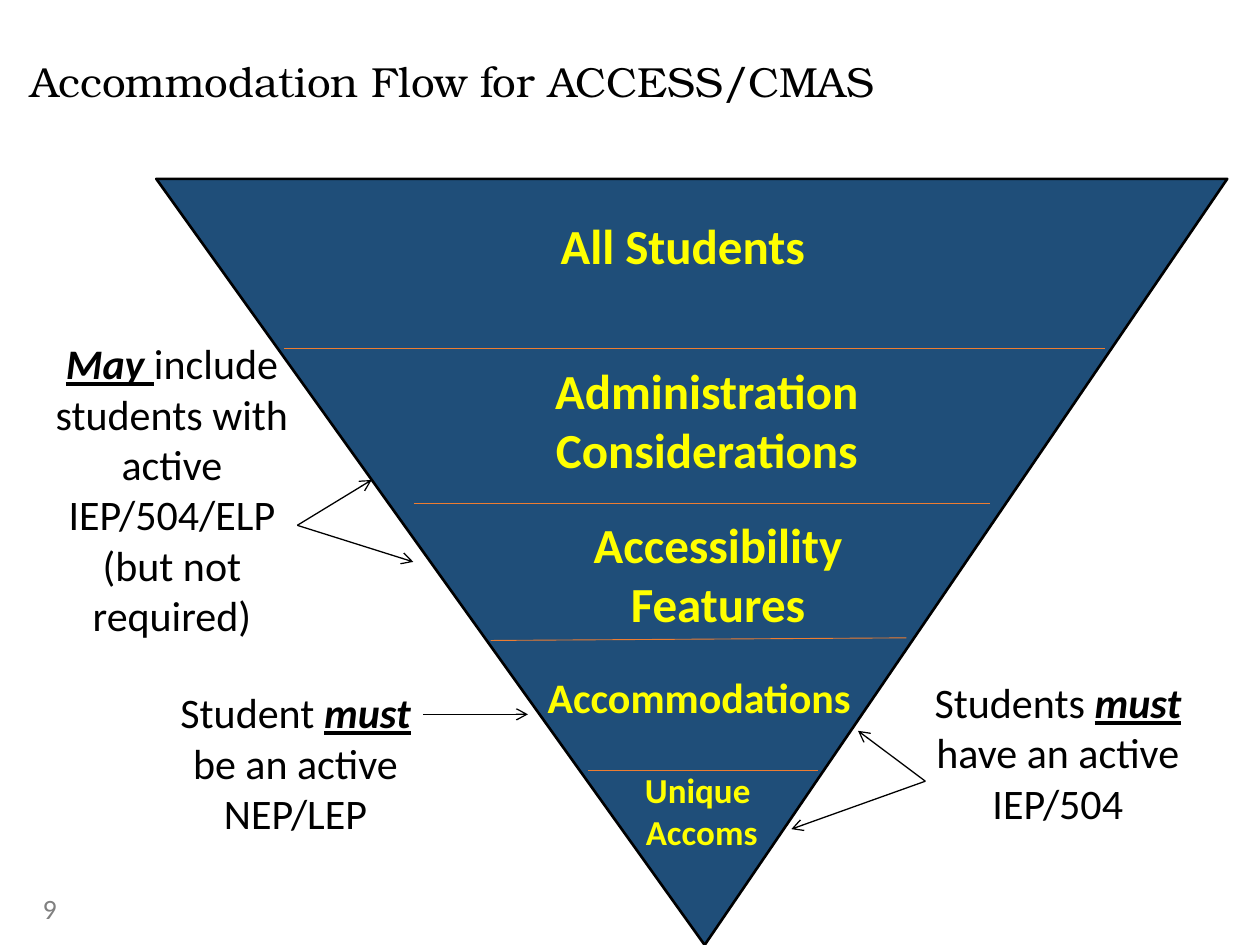
from lxml import etree
from pptx import Presentation
from pptx.dml.color import RGBColor
from pptx.enum import shapes, text
from pptx.oxml import ns
from pptx.util import Pt

INK = {"text": "000000", "fill": "1F4E79", "band": "FFFF00",
       "rule": "ED7D31", "page": "808080"}
FONT = {"head": "TeX Gyre Bonum", "body": "Calibri"}


def tint(name):
    """Return the named colour."""
    return RGBColor.from_string(INK[name])


def style(run, size, ink="text", face="body", bold=False):
    """Format one run."""
    font = run.font
    font.name, font.size, font.bold = FONT[face], Pt(size), bold
    font.color.rgb = tint(ink)


def frame(slide, box, align=text.PP_ALIGN.CENTER):
    """Add a wrapping text box and return its frame and first paragraph."""
    body = slide.shapes.add_textbox(*map(Pt, box)).text_frame
    body.word_wrap = True
    body.paragraphs[0].alignment = align
    return body, body.paragraphs[0]


def link(slide, start, end, ink="text", width=0.75, arrow=False):
    """Draw a straight line, with an open arrowhead if asked."""
    line = slide.shapes.add_connector(
        shapes.MSO_CONNECTOR.STRAIGHT, *map(Pt, (*start, *end)))
    line.line.color.rgb, line.line.width = tint(ink), Pt(width)
    if arrow:
        tail = etree.SubElement(line.line._get_or_add_ln(), ns.qn("a:tailEnd"))
        tail.set("type", "arrow")
    etree.SubElement(line._element.spPr, ns.qn("a:effectLst"))


def head(slide, box, words):
    """Fill and place the title."""
    title = slide.shapes.title
    title.left, title.top, title.width, title.height = map(Pt, box)
    body = title.text_frame
    body.text = words
    body.margin_left = body.margin_right = body.margin_top = body.margin_bottom = 0
    body.vertical_anchor = text.MSO_ANCHOR.MIDDLE
    para = body.paragraphs[0]
    para.alignment, para.line_spacing = text.PP_ALIGN.LEFT, 0.9
    style(para.runs[0], 24, face="head")


def funnel(slide, box, bands, rules):
    """Draw the inverted triangle with its bands and dividing rules."""
    left, top = box[:2]
    shape = slide.shapes.add_shape(
        shapes.MSO_SHAPE.ISOSCELES_TRIANGLE, *map(Pt, box))
    shape.rotation, shape.adjustments[0] = 180, 0.488
    shape.shadow.inherit = False
    shape.fill.solid()
    shape.fill.fore_color.rgb = tint("fill")
    shape.line.color.rgb, shape.line.width = tint("text"), Pt(1.5)
    for words, size, (x, y, wide, high) in bands:
        body, _ = frame(slide, (left + x, top + y, wide, high))
        body.text = words
        for para in body.paragraphs:
            para.alignment = text.PP_ALIGN.CENTER
            style(para.runs[0], size, "band", bold=True)
    for x1, y1, x2, y2 in rules:
        link(slide, (left + x1, top + y1), (left + x2, top + y2), "rule", 0.5)


def note(slide, box, parts, start, ends):
    """Write a side note with its stressed word and arrows to the funnel."""
    left, top = box[:2]
    _, para = frame(slide, box)
    for words, stress in parts:
        run = para.add_run()
        run.text = words
        style(run, 24, bold=stress)
        run.font.italic = run.font.underline = stress
    for x, y in ends:
        link(slide, (left + start[0], top + start[1]), (left + x, top + y),
             arrow=True)


def page(slide, box, words):
    """Write the page number."""
    body, para = frame(slide, box, text.PP_ALIGN.LEFT)
    para.text = words
    style(para.runs[0], 16, "page")


def main():
    """Build and save the slide."""
    deck = Presentation()
    deck.slide_width, deck.slide_height = Pt(720), Pt(540)
    slide = deck.slides.add_slide(deck.slide_layouts[5])
    page(slide, (17.3, 506.2, 162, 28.8), "9")
    head(slide, (17.3, 24.5, 684.7, 46.8), "Accommodation Flow for ACCESS/CMAS")
    bands = [
        ("All Students", 28, (222.8, 17.5, 156.2, 41)),
        ("Administration Considerations", 28, (212.7, 100.3, 203.8, 75)),
        ("Accessibility Features", 28, (229.2, 188.2, 183.6, 75)),
        ("Accommodations", 24, (205.5, 278.2, 209.5, 36)),
        ("Unique \nAccoms", 20, (233.6, 333.6, 156.2, 55.4)),
    ]
    rules = [(73, 96.7, 542.4, 96.7), (147.2, 185.3, 476.2, 185.3),
             (191.1, 263.8, 428.7, 262.3), (246.5, 337.9, 378.3, 337.9)]
    funnel(slide, (89.3, 102.2, 612, 437.8), bands, rules)
    note(slide, (18.7, 189.4, 159.1, 181.4),
         [("May ", True),
          ("include students with active IEP/504/ELP (but not required)", False)],
         (151.2, 110.8), [(217.5, 131.7), (193.7, 84.9)])
    note(slide, (89.3, 388.8, 159.1, 94.3),
         [("Student ", False), ("must ", True),
          ("be an active NEP/LEP", False)],
         (152.6, 19.4), [(212.4, 19.4)])
    note(slide, (524.9, 383, 159.1, 94.3),
         [("Students ", False), ("must ", True),
          ("have an active IEP/504", False)],
         (3.9, 63.4), [(-72.7, 90.8), (-34.6, 34.6)])
    deck.save("out.pptx")


if __name__ == "__main__":
    main()
